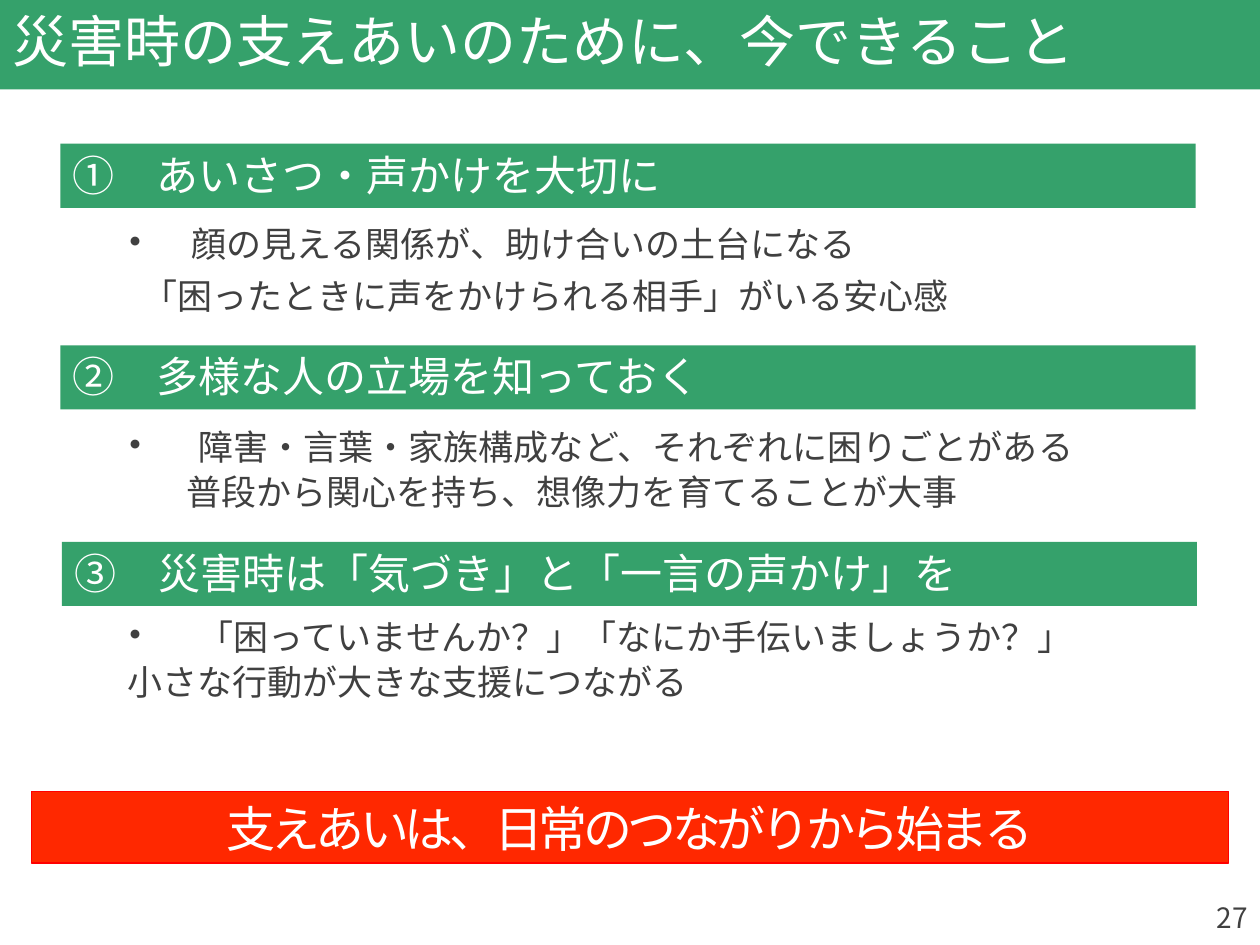
from pptx import Presentation
from pptx.dml.color import RGBColor
from pptx.enum.shapes import MSO_SHAPE
from pptx.enum.text import MSO_ANCHOR, PP_ALIGN
from pptx.oxml.ns import qn
from pptx.util import Inches, Pt

COLORS = {"green": "35A16B", "red": "FF2800", "edge": "FF0000", "white": "FFFFFF", "ink": "404040"}
FONT = "Noto Sans CJK JP"
BODY_LEFT, BODY_WIDTH = 0.48, 9.25
HEADING_WIDTH, HEADING_HEIGHT = 9.01, 0.51
BULLET_INDENT = 0.33

SECTIONS = [
    {"box": (0.48, 1.14), "body": (1.66, 0.91), "heading": "①　あいさつ・声かけを大切に",
     "gap": 20, "first": "顔の見える関係が、助け合いの土台になる",
     "second": "「困ったときに声をかけられる相手」がいる安心感", "indent": 0.55, "pitch": 29},
    {"box": (0.48, 2.74), "body": (3.27, 0.84), "heading": "②　多様な人の立場を知っておく",
     "gap": 24, "first": "障害・言葉・家族構成など、それぞれに困りごとがある",
     "second": "普段から関心を持ち、想像力を育てることが大事", "indent": 0.9, "pitch": 25},
    {"box": (0.49, 4.3), "body": (4.78, 0.84), "heading": "③　災害時は「気づき」と「一言の声かけ」を",
     "gap": 24, "first": "「困っていませんか？」「なにか手伝いましょうか？」",
     "second": "小さな行動が大きな支援につながる", "indent": 0.43, "pitch": 25},
]


def assign(target, **values):
    for name, value in values.items():
        setattr(target, name, value)


def paint(format_part, color):
    format_part.solid()
    format_part.fore_color.rgb = RGBColor.from_string(COLORS[color])


def add_span(para, text, size, color):
    span = para.add_run()
    span.text = text
    assign(span.font, size=Pt(size), name=FONT, bold=False)
    paint(span.font.fill, color)
    properties = span._r.get_or_add_rPr()
    east_asian = properties.makeelement(qn("a:ea"), {"typeface": FONT})
    properties.find(qn("a:latin")).addnext(east_asian)
    return span


def add_text(slide, box):
    shape = slide.shapes.add_textbox(*map(Inches, box))
    shape.text_frame.word_wrap = True
    return shape.text_frame


def add_bar(slide, box, color):
    bar = slide.shapes.add_shape(MSO_SHAPE.RECTANGLE, *map(Inches, box))
    bar.shadow.inherit = False
    paint(bar.fill, color)
    bar.line.fill.background()
    assign(bar.text_frame, word_wrap=True, vertical_anchor=MSO_ANCHOR.MIDDLE)
    return bar


def add_title(slide, box):
    title = slide.shapes.title
    assign(title, **dict(zip(("left", "top", "width", "height"), map(Inches, box))))
    paint(title.fill, "green")
    assign(title.text_frame, word_wrap=True, vertical_anchor=MSO_ANCHOR.MIDDLE)
    para = title.text_frame.paragraphs[0]
    assign(para, alignment=PP_ALIGN.LEFT, line_spacing=0.9)
    add_span(para, "災害時の支えあいのために、今できること", 32, "white")


def add_section(slide, section):
    bar = add_bar(slide, (*section["box"], HEADING_WIDTH, HEADING_HEIGHT), "green")
    para = bar.text_frame.paragraphs[0]
    assign(para, alignment=PP_ALIGN.LEFT, line_spacing=Pt(27))
    add_span(para, section["heading"], 24, "white")

    top, height = section["body"]
    frame = add_text(slide, (BODY_LEFT, top, BODY_WIDTH, height))
    first, second = frame.paragraphs[0], frame.add_paragraph()
    for para, indent, pitch in ((first, BULLET_INDENT, 29), (second, section["indent"], section["pitch"])):
        para.line_spacing = Pt(pitch)
        para._p.get_or_add_pPr().set("marL", str(Inches(indent)))
    add_span(first, "・", 24, "ink")
    add_span(first, "　", section["gap"], "ink")
    add_span(first, section["first"], 20, "ink")
    add_span(second, section["second"], 20, "ink")


def add_message(slide, box):
    bar = add_bar(slide, box, "red")
    paint(bar.line.fill, "edge")
    bar.line.width = Pt(0.75)
    para = bar.text_frame.paragraphs[0]
    assign(para, alignment=PP_ALIGN.CENTER, line_spacing=Pt(34))
    span = add_span(para, "支えあいは、日常のつながりから始まる", 28, "white")
    span._r.get_or_add_rPr().set("spc", "-250")


def add_page_number(slide, box):
    para = add_text(slide, box).paragraphs[0]
    para.alignment = PP_ALIGN.RIGHT
    add_span(para, "27", 16, "ink")


def main():
    deck = Presentation()
    assign(deck, slide_width=Inches(10), slide_height=Inches(7.5))
    slide = deck.slides.add_slide(deck.slide_layouts[5])
    add_title(slide, (0, 0, 10, 0.71))
    add_page_number(slide, (7.75, 7.1, 2.25, 0.4))
    add_message(slide, (0.25, 6.28, 9.5, 0.57))
    for section in SECTIONS:
        add_section(slide, section)
    deck.save("out.pptx")


if __name__ == "__main__":
    main()
